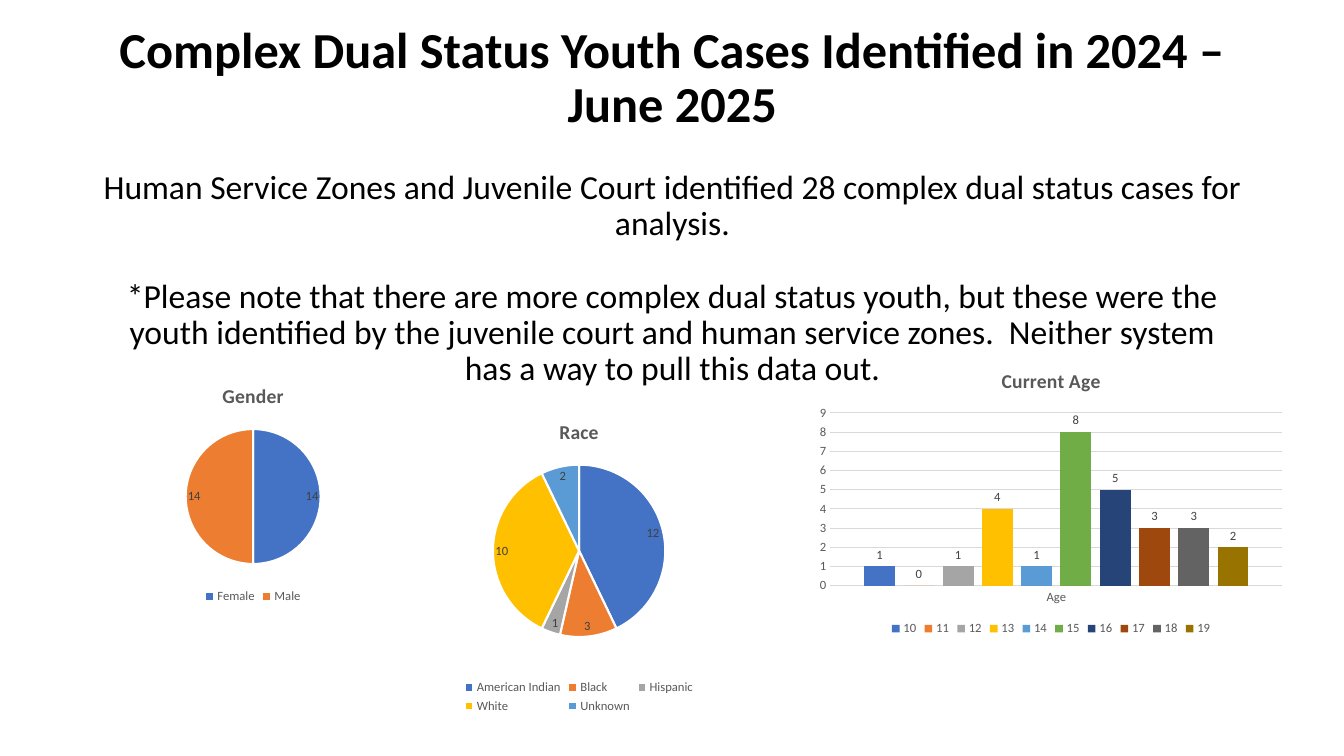
from pptx import Presentation
from pptx.chart.data import CategoryChartData
from pptx.dml.color import RGBColor
from pptx.enum import chart as ch, text
from pptx.util import Cm, Pt

FONT = "Calibri"
BLACK = RGBColor(0x00, 0x00, 0x00)
WHITE = RGBColor(0xFF, 0xFF, 0xFF)
LABEL_GREY = RGBColor(0x40, 0x40, 0x40)
TEXT_GREY = RGBColor(0x59, 0x59, 0x59)
LINE_GREY = RGBColor(0xD9, 0xD9, 0xD9)
PALETTE = [RGBColor.from_string(c) for c in (
    "4472C4", "ED7D31", "A5A5A5", "FFC000", "5B9BD5",
    "70AD47", "264478", "9E480E", "636363", "997300")]

HEADING = "Complex Dual Status Youth Cases Identified in 2024 – June 2025"
NOTES = (
    "Human Service Zones and Juvenile Court identified 28 complex dual status "
    "cases for analysis.",
    "*Please note that there are more complex dual status youth, but these were "
    "the youth identified by the juvenile court and human service zones.  "
    "Neither system has a way to pull this data out.",
)
GENDER = {"Female": 14, "Male": 14}
RACE = {"American Indian": 12, "Black": 3, "Hispanic": 1, "White": 10, "Unknown": 2}
AGES = dict(zip(range(10, 20), (1, 0, 1, 4, 1, 8, 5, 3, 3, 2)))


def style_font(font, size, color, bold=False):
    font.name = FONT
    font.size = Pt(size)
    font.color.rgb = color
    font.bold = bold


def fill_title(sp):
    sp.left, sp.top, sp.width, sp.height = Cm(2.34), Cm(0.5), Cm(29.21), Cm(9.5)
    tf = sp.text_frame
    tf.word_wrap = True
    tf.auto_size = text.MSO_AUTO_SIZE.NONE
    tf.vertical_anchor = text.MSO_ANCHOR.TOP
    tf.text = "\n".join((HEADING, *NOTES))
    for i, p in enumerate(tf.paragraphs):
        p.alignment = text.PP_ALIGN.CENTER
        p.line_spacing = 0.9
        p.space_before = Pt(26 if i else 0)
        style_font(p.runs[0].font, 24 if i else 36, BLACK, bold=i == 0)


def add_titled_chart(slide, kind, title, data, box):
    """Add a chart with the shared title, legend and font style."""
    chart = slide.shapes.add_chart(kind, *map(Cm, box), data).chart
    style_font(chart.font, 10, BLACK)
    chart.has_title = True
    tf = chart.chart_title.text_frame
    tf.text = title
    style_font(tf.paragraphs[0].runs[0].font, 14, TEXT_GREY, bold=True)
    chart.chart_title.include_in_layout = False
    chart.has_legend = True
    chart.legend.position = ch.XL_LEGEND_POSITION.BOTTOM
    chart.legend.include_in_layout = False
    style_font(chart.legend.font, 9, TEXT_GREY)
    return chart


def show_values(labels, position):
    labels.show_value = True
    labels.position = position
    style_font(labels.font, 9, LABEL_GREY)


def add_pie(slide, title, counts, box):
    data = CategoryChartData()
    data.categories = list(counts)
    data.add_series(title, counts.values())
    chart = add_titled_chart(slide, ch.XL_CHART_TYPE.PIE, title, data, box)
    plot = chart.plots[0]
    plot.vary_by_categories = True
    series = plot.series[0]
    for i, color in enumerate(PALETTE[:len(counts)]):
        fmt = series.points[i].format
        fmt.fill.solid()
        fmt.fill.fore_color.rgb = color
        fmt.line.color.rgb = WHITE
        fmt.line.width = Pt(1.5)
    show_values(series.data_labels, ch.XL_LABEL_POSITION.BEST_FIT)


def style_axis(axis):
    axis.major_tick_mark = axis.minor_tick_mark = ch.XL_TICK_MARK.NONE
    style_font(axis.tick_labels.font, 9, TEXT_GREY)


def style_line(line):
    line.color.rgb = LINE_GREY
    line.width = Pt(0.75)


def add_age_columns(slide, box):
    data = CategoryChartData()
    data.categories = ["Age"]
    for age, count in AGES.items():
        data.add_series(str(age), [count])
    chart = add_titled_chart(slide, ch.XL_CHART_TYPE.COLUMN_CLUSTERED,
                             "Current Age", data, box)
    plot = chart.plots[0]
    plot.vary_by_categories = False
    plot.gap_width, plot.overlap = 219, -27
    for series, color in zip(plot.series, PALETTE):
        series.format.fill.solid()
        series.format.fill.fore_color.rgb = color
        show_values(series.data_labels, ch.XL_LABEL_POSITION.OUTSIDE_END)

    style_axis(chart.category_axis)
    style_line(chart.category_axis.format.line)
    values = chart.value_axis
    style_axis(values)
    values.minimum_scale, values.maximum_scale, values.major_unit = 0, 9, 1
    values.format.line.fill.background()
    values.has_major_gridlines = True
    style_line(values.major_gridlines.format.line)


def main():
    prs = Presentation()
    prs.slide_width, prs.slide_height = Cm(33.87), Cm(19.05)
    slide = prs.slides.add_slide(prs.slide_layouts[5])
    fill_title(slide.shapes.title)
    add_pie(slide, "Gender", GENDER, (0.74, 9.3, 11.28, 6.02))
    add_age_columns(slide, (20.42, 8.89, 12.14, 7.24))
    add_pie(slide, "Race", RACE, (8.36, 10.16, 12.47, 7.92))
    prs.save("out.pptx")


if __name__ == "__main__":
    main()
